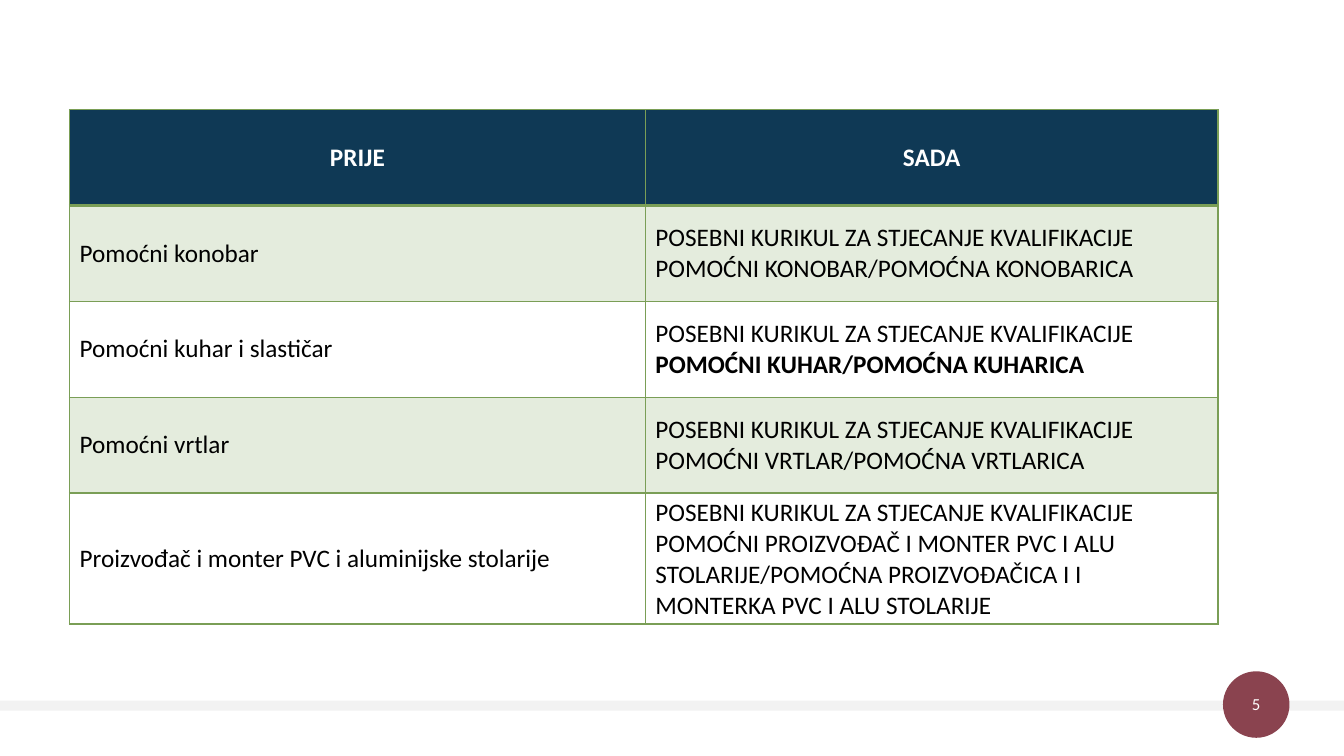
from dataclasses import dataclass

from lxml.etree import SubElement
from pptx import Presentation
from pptx.dml.color import RGBColor
from pptx.enum.shapes import MSO_SHAPE as SHAPE
from pptx.enum.text import MSO_ANCHOR as ANCHOR, PP_ALIGN as ALIGN
from pptx.oxml.ns import qn
from pptx.util import Inches, Pt

COLORS = {
    "navy": "0F3955",
    "green": "7A9E56",
    "pale": "E4ECDD",
    "rose": "8A434F",
    "grey": "F2F2F2",
    "white": "FFFFFF",
    "black": "000000",
}
FONT = "Calibri"
COL_WIDTHS = (5.71, 5.68)
ROW_HEIGHTS = (0.95, 0.95, 0.95, 0.95, 1.27)
CURRICULUM = "POSEBNI KURIKUL ZA STJECANJE KVALIFIKACIJE "


@dataclass
class Qualification:
    before: str
    now: str
    bold: bool = False


@dataclass
class FooterShape:
    kind: SHAPE
    left: float
    top: float
    width: float
    height: float
    color: str


QUALIFICATIONS = [
    Qualification("Pomoćni konobar", "POMOĆNI KONOBAR/POMOĆNA KONOBARICA"),
    Qualification("Pomoćni kuhar i slastičar", "POMOĆNI KUHAR/POMOĆNA KUHARICA", True),
    Qualification("Pomoćni vrtlar", "POMOĆNI VRTLAR/POMOĆNA VRTLARICA"),
    Qualification(
        "Proizvođač i monter PVC i aluminijske stolarije",
        "POMOĆNI PROIZVOĐAČ I MONTER PVC I ALU STOLARIJE/"
        "POMOĆNA PROIZVOĐAČICA I I MONTERKA PVC I ALU STOLARIJE",
    ),
]
FOOTER = [
    FooterShape(SHAPE.RECTANGLE, 0, 6.95, 13.33, 0.1, "grey"),
    FooterShape(SHAPE.OVAL, 12.13, 6.66, 0.66, 0.66, "rose"),
]


def rgb(name: str) -> RGBColor:
    return RGBColor.from_string(COLORS[name])


def add_run(p, text: str, size: float, color: str, bold: bool = False) -> None:
    r = p.add_run()
    r.text = text
    r.font.name = FONT
    r.font.size = Pt(size)
    r.font.bold = bold
    r.font.color.rgb = rgb(color)


def add_footer_shape(s, item: FooterShape) -> None:
    sp = s.shapes.add_shape(
        item.kind, Inches(item.left), Inches(item.top), Inches(item.width), Inches(item.height)
    )
    sp.shadow.inherit = False
    sp.fill.solid()
    sp.fill.fore_color.rgb = rgb(item.color)
    sp.line.fill.background()


def add_page_number(s, number: str) -> None:
    sp = s.shapes.add_textbox(Inches(12.13), Inches(6.77), Inches(0.66), Inches(0.43))
    tf = sp.text_frame
    tf.word_wrap = True
    tf.margin_left = tf.margin_right = tf.margin_top = tf.margin_bottom = 0
    tf.vertical_anchor = ANCHOR.MIDDLE
    p = tf.paragraphs[0]
    p.alignment = ALIGN.CENTER
    add_run(p, number, 12, "white")


def style_cell(cell, row: int) -> None:
    cell.vertical_anchor = ANCHOR.MIDDLE
    tc_pr = cell._tc.get_or_add_tcPr()
    for side in "LRTB":
        thick = (row == 0 and side == "B") or (row == 1 and side == "T")
        ln = SubElement(tc_pr, qn(f"a:ln{side}"), w=str(Pt(2 if thick else 1)))
        fill = SubElement(ln, qn("a:solidFill"))
        SubElement(fill, qn("a:srgbClr"), val=COLORS["green"])
    if row and row % 2 == 0:
        cell.fill.background()
    else:
        cell.fill.solid()
        cell.fill.fore_color.rgb = rgb("pale" if row else "navy")


def add_comparison(s) -> None:
    table = s.shapes.add_table(
        len(ROW_HEIGHTS), len(COL_WIDTHS), Inches(0.69), Inches(1.09),
        Inches(sum(COL_WIDTHS)), Inches(sum(ROW_HEIGHTS)),
    ).table
    table.horz_banding = False
    for column, width in zip(table.columns, COL_WIDTHS):
        column.width = Inches(width)
    for i, height in enumerate(ROW_HEIGHTS):
        table.rows[i].height = Inches(height)
        for cell in table.rows[i].cells:
            style_cell(cell, i)
    for i, heading in enumerate(("PRIJE", "SADA")):
        p = table.cell(0, i).text_frame.paragraphs[0]
        p.alignment = ALIGN.CENTER
        add_run(p, heading, 18, "white", True)
    for i, item in enumerate(QUALIFICATIONS, 1):
        before, now = (table.cell(i, j).text_frame.paragraphs[0] for j in range(2))
        add_run(before, item.before, 18, "black")
        if item.bold:
            add_run(now, CURRICULUM, 18, "black")
            add_run(now, item.now, 18, "black", True)
        else:
            add_run(now, CURRICULUM + item.now, 18, "black")


def main() -> None:
    prs = Presentation()
    prs.slide_width = Inches(13.33)
    prs.slide_height = Inches(7.5)
    s = prs.slides.add_slide(prs.slide_layouts[6])
    for item in FOOTER:
        add_footer_shape(s, item)
    add_page_number(s, "5")
    add_comparison(s)
    prs.save("out.pptx")


if __name__ == "__main__":
    main()
